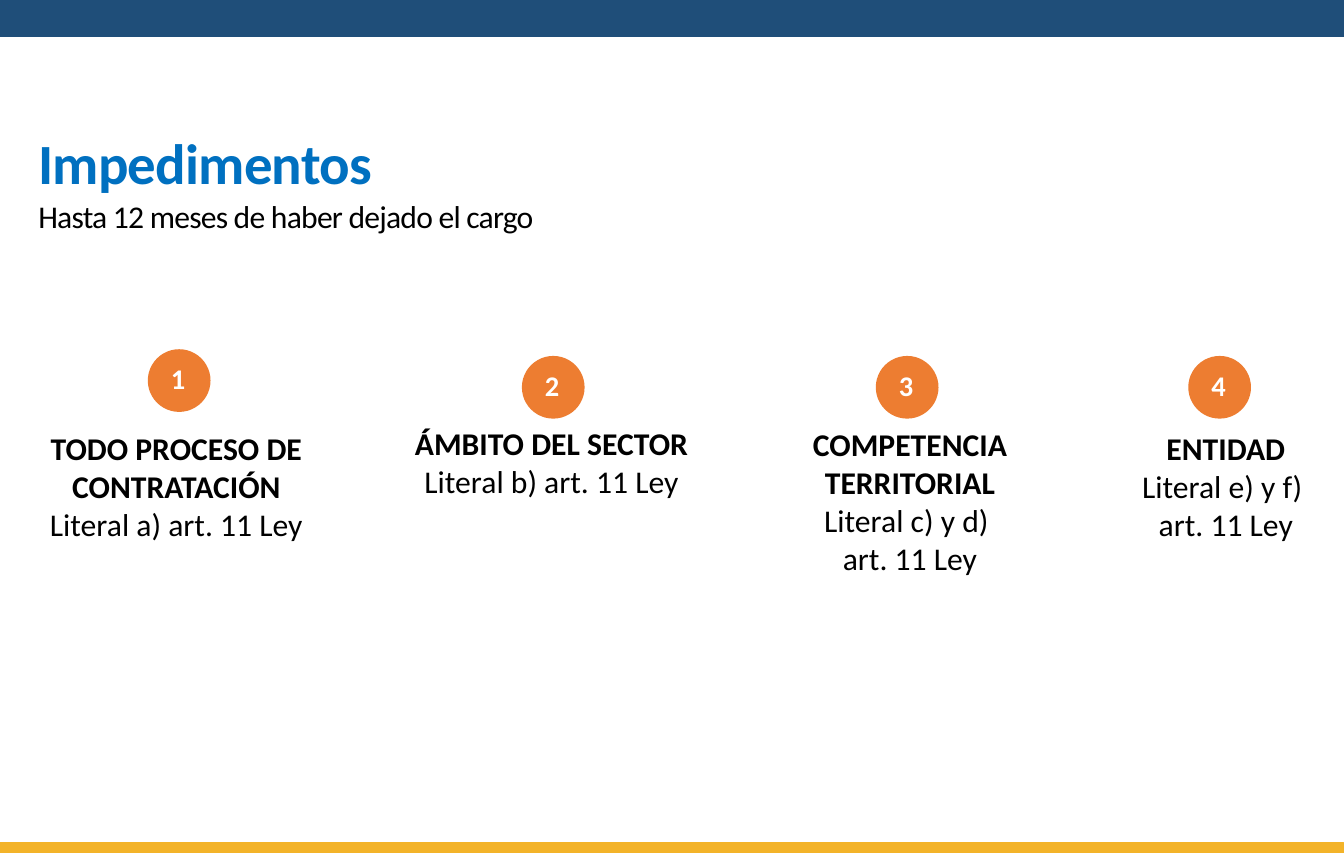
"""Build the slide on impediments up to 12 months after leaving office."""
from pptx import Presentation
from pptx.dml.color import RGBColor
from pptx.enum.shapes import MSO_SHAPE
from pptx.enum.text import MSO_ANCHOR, MSO_AUTO_SIZE, PP_ALIGN
from pptx.util import Pt

PX = 9000
WIDTH, HEIGHT = 1200, 762
FONT = "Calibri"
COLORS = {"navy": "1F4E79", "gold": "F3B329", "blue": "0070C0",
          "orange": "ED7D31", "black": "000000", "white": "FFFFFF"}

HEADING = ["Impedimentos", "Hasta 12 meses de haber dejado el cargo"]
HEADING_BOX = (24, 103, 1106, 112)
HEADING_LOOKS = [(36, "blue", True, 0.9), (20, "black", False, 1.0)]
BANDS = [("navy", 0, 33), ("gold", 753, 10)]
CIRCLE = 56
SCOPES = [
    (["TODO PROCESO DE CONTRATACIÓN", "Literal a) art. 11 Ley"],
     (-19, 378, 353, 113), (132, 312)),
    (["ÁMBITO DEL SECTOR", "Literal b) art. 11 Ley"],
     (346, 374, 293, 113), (466, 318)),
    (["COMPETENCIA TERRITORIAL", "Literal c) y d) ", "art. 11 Ley"],
     (655, 375, 315, 181), (782, 318)),
    (["ENTIDAD", "Literal e) y f) ", "art. 11 Ley"],
     (956, 378, 277, 113), (1061, 318)),
]


def emu(box):
    return [length * PX for length in box]


def rgb(name):
    return RGBColor.from_string(COLORS[name])


def style(paragraph, size, color, bold, align=PP_ALIGN.CENTER):
    paragraph.alignment = align
    for run in paragraph.runs:
        run.font.name = FONT
        run.font.size = Pt(size)
        run.font.bold = bold
        run.font.color.rgb = rgb(color)


def add_filled(slide, kind, box, color):
    shape = slide.shapes.add_shape(kind, *emu(box))
    shape.shadow.inherit = False
    shape.fill.solid()
    shape.fill.fore_color.rgb = rgb(color)
    shape.line.fill.background()
    return shape


def add_heading(slide):
    title = slide.shapes.title
    title.left, title.top, title.width, title.height = emu(HEADING_BOX)
    frame = title.text_frame
    frame.text = "\n".join(HEADING)
    frame.word_wrap = True
    frame.auto_size = MSO_AUTO_SIZE.NONE
    frame.vertical_anchor = MSO_ANCHOR.BOTTOM
    for paragraph, (size, color, bold, spacing) in zip(frame.paragraphs, HEADING_LOOKS):
        style(paragraph, size, color, bold, PP_ALIGN.LEFT)
        paragraph.line_spacing = spacing
        for run in paragraph.runs:
            run.font._element.set("spc", "-50")


def add_scope(slide, number, lines, box, corner):
    frame = slide.shapes.add_textbox(*emu(box)).text_frame
    frame.word_wrap = True
    frame.text = "\n".join(lines)
    for index, paragraph in enumerate(frame.paragraphs):
        style(paragraph, 20, "black", index == 0)

    circle = add_filled(slide, MSO_SHAPE.OVAL, (*corner, CIRCLE, CIRCLE), "orange")
    label = circle.text_frame
    label.margin_left = label.margin_top = 0
    label.margin_right, label.margin_bottom = emu((2, 4))
    label.vertical_anchor = MSO_ANCHOR.MIDDLE
    label.text = str(number)
    style(label.paragraphs[0], 18, "white", True)


def main():
    deck = Presentation()
    deck.slide_width, deck.slide_height = emu((WIDTH, HEIGHT))
    slide = deck.slides.add_slide(deck.slide_layouts[5])
    for color, top, height in BANDS:
        band = add_filled(slide, MSO_SHAPE.RECTANGLE, (0, top, WIDTH, height), color)
        if color == "gold":
            band.line.color.rgb = rgb(color)
            band.line.width = Pt(0.75)
    add_heading(slide)
    for number, scope in enumerate(SCOPES, 1):
        add_scope(slide, number, *scope)
    deck.save("out.pptx")


if __name__ == "__main__":
    main()
